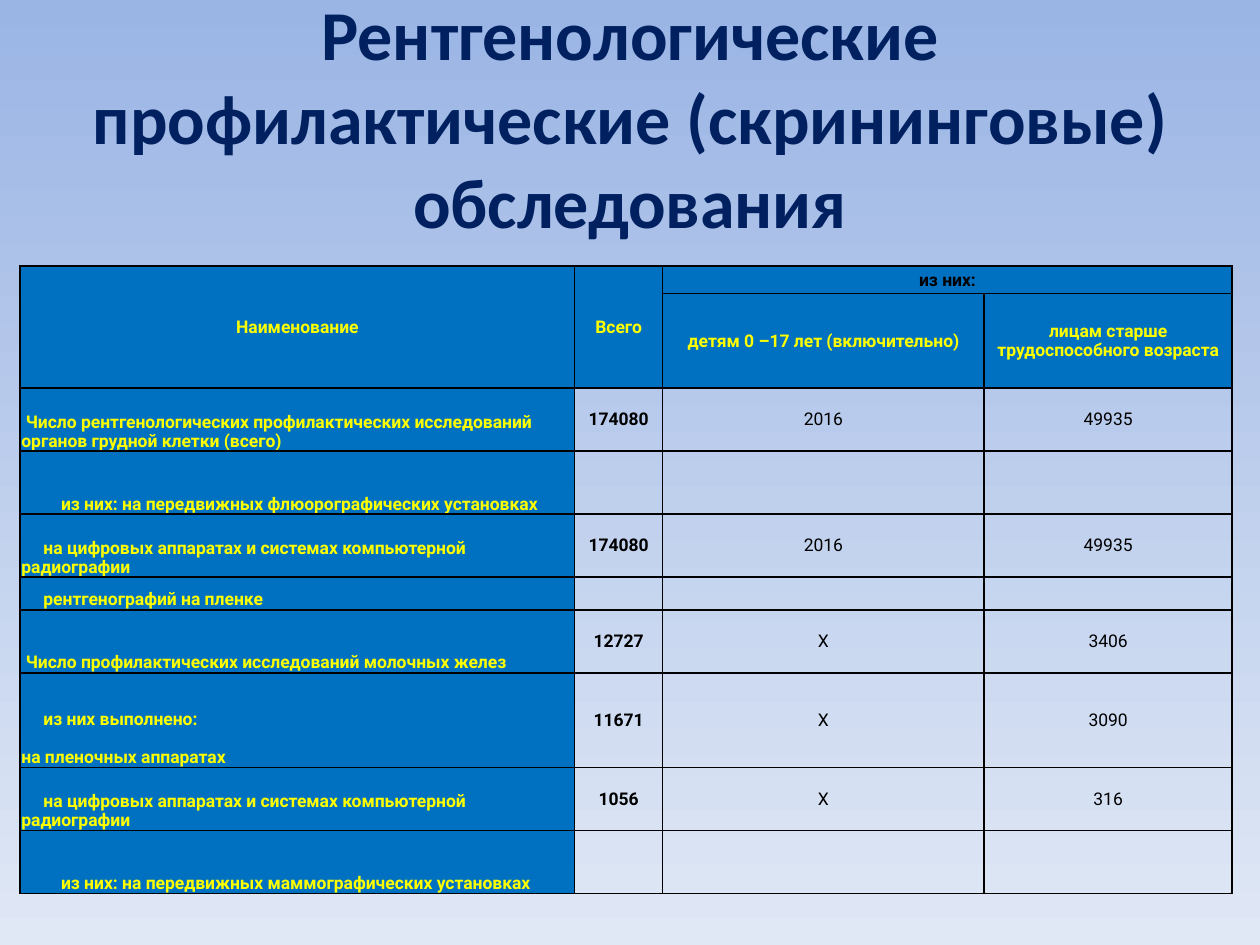
from lxml.etree import SubElement
from pptx import Presentation
from pptx.dml.color import RGBColor
from pptx.enum.text import MSO_ANCHOR as Anchor, MSO_AUTO_SIZE as Auto, PP_ALIGN as Align
from pptx.oxml import parse_xml
from pptx.oxml.ns import nsdecls, qn
from pptx.util import Inches, Pt

TITLE = "Рентгенологические профилактические (скрининговые) обследования"
NAVY, BLUE, YELLOW, BLACK = "002060", "0070C0", "FFFF00", "000000"
SKY = ("9AB4E4", "E0E8F5")
STEP = 0.035  # one indent unit, inches

COLS = (4.4, 0.7, 2.55, 1.97)
ROWS = (0.22, 0.75, 0.5, 0.5, 0.5, 0.26, 0.5, 0.75, 0.5, 0.5)

# Header cells: row, column, last row, last column, text, colour
HEAD = [
    (0, 0, 1, 0, "Наименование", YELLOW),
    (0, 1, 1, 1, "Всего", YELLOW),
    (0, 2, 0, 3, "из них:", BLACK),
    (1, 2, 1, 2, "детям 0 –17 лет (включительно)", YELLOW),
    (1, 3, 1, 3, "лицам старше трудоспособного возраста", YELLOW),
]
# Body rows: indent units, name, values
DIGITAL = "на цифровых аппаратах и системах компьютерной радиографии"
NONE = ("", "", "")
BODY = [
    (1, "Число рентгенологических профилактических исследований органов грудной клетки (всего)",
     ("174080", "2016", "49935")),
    (9, "из них: на передвижных флюорографических установках", NONE),
    (5, DIGITAL, ("174080", "2016", "49935")),
    (5, "рентгенографий на пленке", NONE),
    (1, "Число профилактических исследований молочных желез", ("12727", "X", "3406")),
    (5, "из них выполнено:\nна пленочных аппаратах", ("11671", "X", "3090")),
    (5, DIGITAL, ("1056", "X", "316")),
    (9, "из них: на передвижных маммографических установках", NONE),
]


def rgb(code):
    return RGBColor.from_string(code)


def style(font, name, size, color, bold):
    font.name, font.size, font.bold = name, Pt(size), bold
    font.color.rgb = rgb(color)


def frame(cell):
    """Draw a thin black line on all four sides."""
    props = cell._tc.get_or_add_tcPr()
    for i, side in enumerate("LRTB"):
        props.insert(i, parse_xml(
            f'<a:ln{side} {nsdecls("a")} w="12700"><a:solidFill>'
            f'<a:srgbClr val="{BLACK}"/></a:solidFill></a:ln{side}>'))


def write(cell, text, color, bold=True, align=Align.CENTER, anchor=Anchor.MIDDLE, indent=0):
    cell.text = text
    cell.vertical_anchor = anchor
    for i, par in enumerate(cell.text_frame.paragraphs):
        par.alignment, par.line_spacing = align, 0.93
        if i:
            par.space_before = Pt(11)
        elif indent:
            props = par._p.get_or_add_pPr()
            props.set("marL", "0")
            props.set("indent", str(Inches(indent * STEP)))
        style(par.font, "Roboto", 10, color, bold)
        if not text:  # keeps empty rows low
            SubElement(par._p, qn("a:endParaRPr")).set("sz", "1000")


def build():
    deck = Presentation()
    deck.slide_width, deck.slide_height = Inches(10), Inches(7.5)
    slide = deck.slides.add_slide(deck.slide_layouts[5])

    # Background, light towards the bottom
    fill = slide.background.fill
    fill.gradient()
    fill.gradient_angle = 270
    for stop, code, pos in zip(fill.gradient_stops, SKY, (0, 1)):
        stop.color.rgb, stop.position = rgb(code), pos

    # Title
    title = slide.shapes.title
    title.left, title.top = Inches(0.5), Inches(0.21)
    title.width, title.height = Inches(9), Inches(1.43)
    box = title.text_frame
    box.text, box.word_wrap = TITLE, True
    box.auto_size, box.vertical_anchor = Auto.NONE, Anchor.MIDDLE
    box.paragraphs[0].alignment = Align.CENTER
    style(box.paragraphs[0].font, "Calibri", 40, NAVY, True)

    # Table grid
    table = slide.shapes.add_table(
        len(ROWS), len(COLS), Inches(0.16), Inches(2.11),
        Inches(sum(COLS)), Inches(sum(ROWS))).table
    table.first_row = table.horz_banding = False
    for col, size in zip(table.columns, COLS):
        col.width = Inches(size)
    for row, size in zip(table.rows, ROWS):
        row.height = Inches(size)
    for r in range(len(ROWS)):
        for c in range(len(COLS)):
            cell = table.cell(r, c)
            cell.margin_left = cell.margin_right = cell.margin_top = Inches(0.01)
            cell.margin_bottom = 0
            if r < 2 or c == 0:
                cell.fill.solid()
                cell.fill.fore_color.rgb = rgb(BLUE)
            else:
                cell.fill.background()
            frame(cell)

    # Header
    for r, c, low, right, text, color in HEAD:
        cell = table.cell(r, c)
        if (r, c) != (low, right):
            cell.merge(table.cell(low, right))
        write(cell, text, color)

    # Body
    for r, (indent, name, vals) in enumerate(BODY, 2):
        write(table.cell(r, 0), name, YELLOW, align=Align.LEFT,
              anchor=Anchor.BOTTOM, indent=indent)
        for c, val in enumerate(vals, 1):
            write(table.cell(r, c), val, BLACK, bold=c == 1)

    deck.save("out.pptx")


if __name__ == "__main__":
    build()
